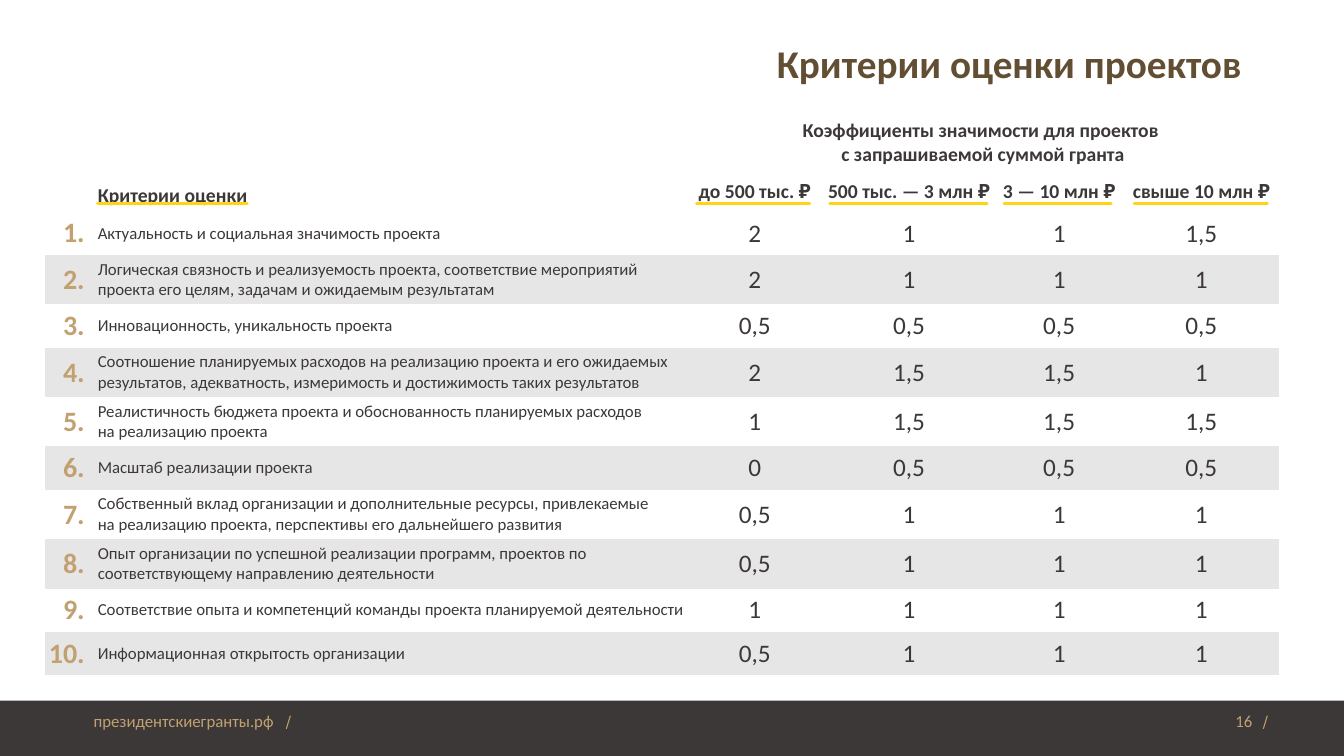
"""Build the slide with the project assessment criteria and their weights."""
from typing import Any, NamedTuple

from lxml import etree
from pptx import Presentation
from pptx.dml.color import RGBColor
from pptx.enum.shapes import MSO_CONNECTOR, MSO_SHAPE
from pptx.enum.text import MSO_ANCHOR, PP_ALIGN
from pptx.oxml.ns import qn
from pptx.util import Inches, Pt

STRAIGHT = MSO_CONNECTOR.STRAIGHT
RECTANGLE = MSO_SHAPE.RECTANGLE
MIDDLE, BOTTOM = MSO_ANCHOR.MIDDLE, MSO_ANCHOR.BOTTOM
LEFT, CENTER, RIGHT = PP_ALIGN.LEFT, PP_ALIGN.CENTER, PP_ALIGN.RIGHT

COLORS = {
    "white": "FFFFFF",
    "band": "E7E6E6",
    "dark": "3C3837",
    "gold": "C2A171",
    "brown": "624E33",
    "yellow": "FFD415",
}
FONT_NAME = "Calibri"
PLAIN_TABLE_STYLE = "{2D5ABB26-0587-4C30-8999-92F81FD0307C}"


class TextFormat(NamedTuple):
    size: int
    color: str
    bold: bool = False
    align: Any = LEFT
    anchor: Any = MIDDLE


class Criterion(NamedTuple):
    text: str
    weights: str
    height: float


class Rule(NamedTuple):
    start: tuple[float, float]
    end: tuple[float, float]
    color: str
    width: float
    cap: str = "flat"


TITLE = TextFormat(28, "brown", True, RIGHT)
HEADING = TextFormat(14, "dark", True, LEFT, BOTTOM)
COLUMN_HEADING = TextFormat(14, "dark", True, CENTER)
NUMBER = TextFormat(20, "gold", True, RIGHT)
CRITERION = TextFormat(12, "dark")
WEIGHT = TextFormat(18, "dark", False, CENTER)
FOOTER = TextFormat(12, "gold")
PAGE_NUMBER = TextFormat(12, "gold", False, RIGHT)

COLUMN_WIDTHS = (0.51, 5.85, 1.35, 1.71, 1.27, 1.55)
HEADER_HEIGHTS = (0.56, 0.32)
SINGLE, DOUBLE = 0.43, 0.49
GRANT_SIZES = ("до 500 тыс. ₽", "500 тыс. — 3 млн ₽", "3 — 10 млн ₽", "свыше 10 млн ₽")
CRITERIA = (
    Criterion("Актуальность и социальная значимость проекта", "2 1 1 1,5", SINGLE),
    Criterion(
        "Логическая связность и реализуемость проекта, соответствие мероприятий "
        "проекта его целям, задачам и ожидаемым результатам", "2 1 1 1", DOUBLE),
    Criterion("Инновационность, уникальность проекта", "0,5 0,5 0,5 0,5", SINGLE),
    Criterion(
        "Соотношение планируемых расходов на реализацию проекта и его ожидаемых "
        "результатов, адекватность, измеримость и достижимость таких результатов",
        "2 1,5 1,5 1", DOUBLE),
    Criterion(
        "Реалистичность бюджета проекта и обоснованность планируемых расходов \v"
        "на реализацию проекта", "1 1,5 1,5 1,5", DOUBLE),
    Criterion("Масштаб реализации проекта", "0 0,5 0,5 0,5", SINGLE),
    Criterion(
        "Собственный вклад организации и дополнительные ресурсы, привлекаемые \v"
        "на реализацию проекта, перспективы его дальнейшего развития",
        "0,5 1 1 1", DOUBLE),
    Criterion(
        "Опыт организации по успешной реализации программ, проектов по "
        "соответствующему направлению деятельности", "0,5 1 1 1", DOUBLE),
    Criterion(
        "Соответствие опыта и компетенций команды проекта планируемой деятельности",
        "1 1 1 1", SINGLE),
    Criterion("Информационная открытость организации", "0,5 1 1 1", SINGLE),
)
UNDERLINES = ((6.91, 8.03), (8.23, 9.79), (9.96, 11.02), (11.25, 12.57), (0.97, 2.45))
RULES = [Rule((x, 7.1), (x - 0.04, 7.23), "gold", 0.75) for x in (2.88, 12.57)] + [
    Rule((left, 2.02), (right, 2.02), "yellow", 2.25, "rnd") for left, right in UNDERLINES
]


def rgb(name: str) -> RGBColor:
    """Return a named colour."""
    return RGBColor.from_string(COLORS[name])


def write(paragraph: Any, text: str, style: TextFormat) -> None:
    """Put formatted text into a paragraph."""
    paragraph.text = text
    paragraph.alignment = style.align
    values = {"name": FONT_NAME, "size": Pt(style.size), "bold": style.bold}
    for run in paragraph.runs:
        for attribute, value in values.items():
            setattr(run.font, attribute, value)
        run.font.color.rgb = rgb(style.color)


def place(shape: Any, left: float, top: float, width: float, height: float) -> None:
    """Move and size a shape."""
    box = {"left": left, "top": top, "width": width, "height": height}
    for attribute, value in box.items():
        setattr(shape, attribute, Inches(value))


def fill_frame(shape: Any, text: str, style: TextFormat) -> None:
    """Write text into a wrapped frame."""
    shape.text_frame.word_wrap = True
    shape.text_frame.vertical_anchor = style.anchor
    write(shape.text_frame.paragraphs[0], text, style)


def add_text(slide: Any, box: tuple[float, ...], text: str, style: TextFormat) -> None:
    """Add a text box."""
    fill_frame(slide.shapes.add_textbox(*map(Inches, box)), text, style)


def add_rule(slide: Any, rule: Rule) -> None:
    """Draw a straight line."""
    line = slide.shapes.add_connector(STRAIGHT, *map(Inches, rule.start + rule.end))
    line.line.color.rgb = rgb(rule.color)
    line.line.width = Pt(rule.width)
    properties = line.element.spPr
    properties.find(qn("a:ln")).set("cap", rule.cap)
    etree.SubElement(properties, qn("a:effectLst"))


def fill_cell(cell: Any, text: str, style: TextFormat) -> None:
    """Write text into a table cell."""
    margins = {
        "margin_left": 0.01,
        "margin_right": 0.12 if style is NUMBER else 0.01,
        "margin_top": 0.04,
        "margin_bottom": 0.04,
    }
    for attribute, value in margins.items():
        setattr(cell, attribute, Inches(value))
    cell.vertical_anchor = style.anchor
    write(cell.text_frame.paragraphs[0], text, style)


def add_criteria_table(slide: Any) -> None:
    """Add the table of criteria and weights."""
    heights = HEADER_HEIGHTS + tuple(criterion.height for criterion in CRITERIA)
    box = map(Inches, (0.45, 1.14, sum(COLUMN_WIDTHS), sum(heights)))
    frame = slide.shapes.add_table(len(heights), len(COLUMN_WIDTHS), *box)
    table = frame.table
    table.first_row = table.horz_banding = False
    next(frame.element.iter(qn("a:tableStyleId"))).text = PLAIN_TABLE_STYLE
    for column, width in zip(table.columns, COLUMN_WIDTHS):
        column.width = Inches(width)
    for index, (row, height) in enumerate(zip(table.rows, heights)):
        row.height = Inches(height)
        banded = index >= len(HEADER_HEIGHTS) and index % 2
        for cell in row.cells:
            cell.fill.solid()
            cell.fill.fore_color.rgb = rgb("band" if banded else "white")
    for first, last in (((0, 0), (1, 0)), ((0, 1), (1, 1)), ((0, 2), (0, 5))):
        table.cell(*first).merge(table.cell(*last))
    fill_cell(table.cell(0, 1), "Критерии оценки", HEADING)
    fill_cell(
        table.cell(0, 2),
        "Коэффициенты значимости для проектов \vс запрашиваемой суммой гранта",
        COLUMN_HEADING)
    for column, grant_size in enumerate(GRANT_SIZES, 2):
        fill_cell(table.cell(1, column), grant_size, COLUMN_HEADING)
    for number, criterion in enumerate(CRITERIA, 1):
        texts = (f"{number}.", criterion.text, *criterion.weights.split())
        styles = (NUMBER, CRITERION) + (WEIGHT,) * len(GRANT_SIZES)
        for column, (text, style) in enumerate(zip(texts, styles)):
            fill_cell(table.cell(number + 1, column), text, style)


def main() -> None:
    """Build and save the presentation."""
    presentation = Presentation()
    presentation.slide_width = Inches(13.33)
    presentation.slide_height = Inches(7.5)
    slide = presentation.slides.add_slide(presentation.slide_layouts[5])
    title = slide.shapes.title
    place(title, 2.45, 0.21, 9.96, 0.89)
    fill_frame(title, "Критерии оценки проектов", TITLE)
    title.text_frame.paragraphs[0].line_spacing = 0.9
    footer = slide.shapes.add_shape(RECTANGLE, *map(Inches, (0, 6.95, 13.33, 0.55)))
    footer.shadow.inherit = False
    footer.fill.solid()
    footer.fill.fore_color.rgb = rgb("dark")
    footer.line.fill.background()
    add_text(slide, (0.83, 6.95, 3.03, 0.4), "президентскиегранты.рф", FOOTER)
    add_text(slide, (11.68, 6.95, 0.84, 0.4), "16", PAGE_NUMBER)
    add_criteria_table(slide)
    for rule in RULES:
        add_rule(slide, rule)
    presentation.save("out.pptx")


if __name__ == "__main__":
    main()
